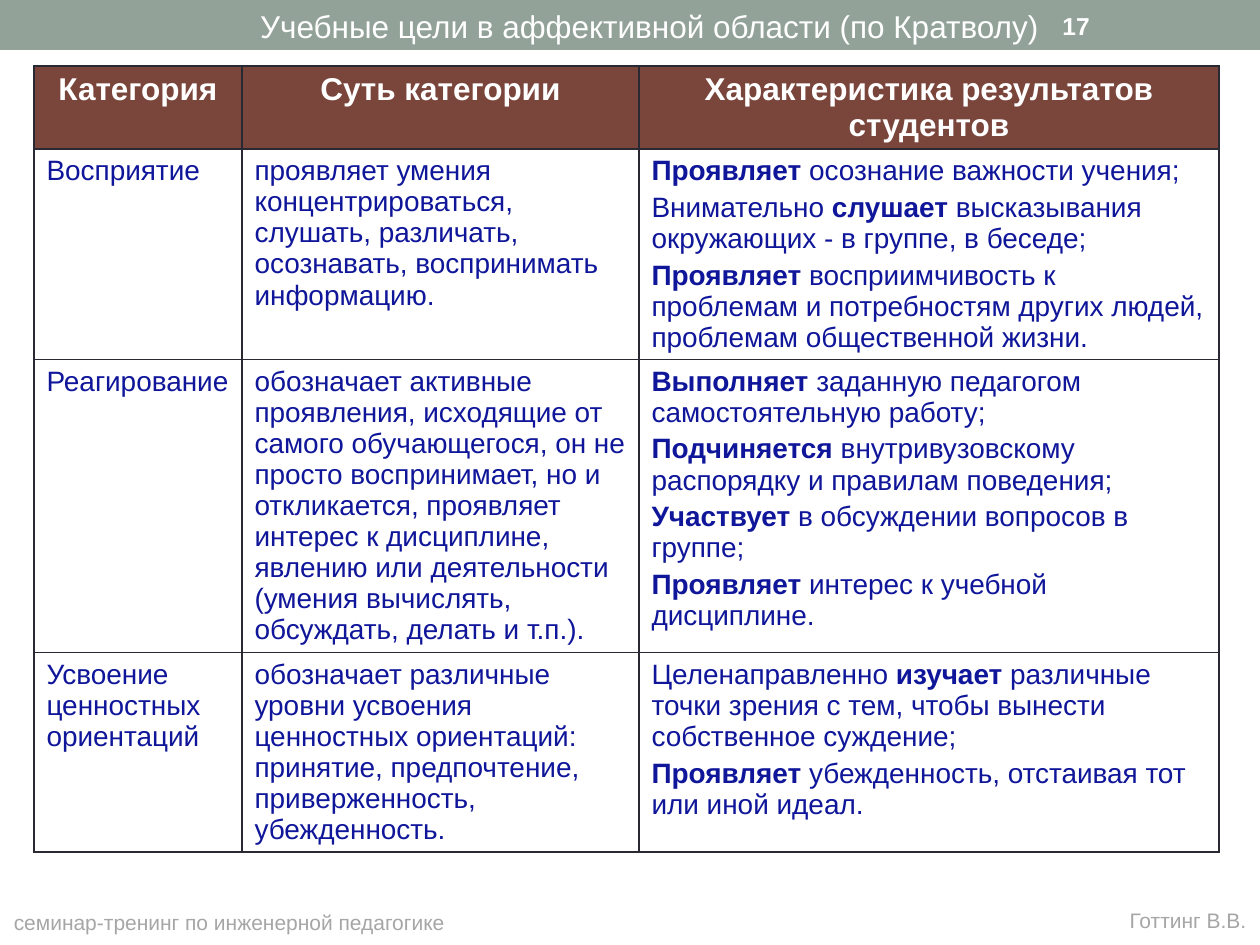
from lxml import etree
from pptx import Presentation
from pptx.dml.color import RGBColor
from pptx.enum.shapes import MSO_SHAPE
from pptx.enum.text import MSO_ANCHOR, PP_ALIGN
from pptx.oxml.ns import qn
from pptx.util import Pt

EMU_PER_PX = 914400 / 126
RECTANGLE = MSO_SHAPE.RECTANGLE
LEFT, CENTER = PP_ALIGN.LEFT, PP_ALIGN.CENTER
TOP, MIDDLE = MSO_ANCHOR.TOP, MSO_ANCHOR.MIDDLE

WHITE, SAGE, BROWN = "FFFFFF", "93A299", "7A463C"
NAVY, GRAY, BORDER = "0F1699", "A6A6A6", "292934"

COLUMN_WIDTHS = [208, 397, 580]
ROW_HEIGHTS = [83, 210, 293, 199]

# Each cell is a list of paragraphs; ** switches bold on and off
GOALS = [
    [["Категория"], ["Суть категории"], ["Характеристика результатов студентов"]],
    [["Восприятие"],
     ["проявляет умения концентрироваться, слушать, различать, осознавать, "
      "воспринимать информацию."],
     ["**Проявляет** осознание важности учения;",
      "Внимательно **слушает** высказывания окружающих - в группе, в беседе;",
      "**Проявляет** восприимчивость к проблемам и потребностям других людей, "
      "проблемам общественной жизни."]],
    [["Реагирование"],
     ["обозначает активные проявления, исходящие от самого обучающегося, он не "
      "просто воспринимает, но и откликается, проявляет интерес к дисциплине, "
      "явлению или деятельности (умения вычислять, обсуждать, делать и т.п.)."],
     ["**Выполняет** заданную педагогом самостоятельную работу;",
      "**Подчиняется **внутривузовскому распорядку и правилам поведения;",
      "**Участвует** в обсуждении вопросов в группе;",
      "**Проявляет** интерес к учебной дисциплине."]],
    [["Усвоение ценностных ориентаций"],
     ["обозначает различные уровни усвоения ценностных ориентаций: принятие, "
      "предпочтение, приверженность, убежденность."],
     ["Целенаправленно **изучает** различные точки зрения с тем, чтобы вынести "
      "собственное суждение;",
      "**Проявляет** убежденность, отстаивая тот или иной идеал."]],
]


def px(length):
    return round(length * EMU_PER_PX)


def color(hex_value):
    return RGBColor.from_string(hex_value)


class SlideBuilder:
    font = "Arial"

    def __init__(self, slide):
        self.slide = slide

    def style(self, run, size, hex_value, bold):
        run.font.name = self.font
        run.font.size = Pt(size)
        run.font.bold = bold
        run.font.color.rgb = color(hex_value)

    def bar(self, left, top, width, height, fill):
        bar = self.slide.shapes.add_shape(
            RECTANGLE, px(left), px(top), px(width), px(height))
        bar.shadow.inherit = False
        bar.fill.solid()
        bar.fill.fore_color.rgb = color(fill)
        bar.line.fill.background()

    def text(self, left, top, width, height, wording, size, hex_value,
             bold=False, align=CENTER, anchor=MIDDLE):
        frame = self.slide.shapes.add_textbox(
            px(left), px(top), px(width), px(height)).text_frame
        frame.word_wrap = True
        frame.vertical_anchor = anchor
        frame.text = wording
        paragraph = frame.paragraphs[0]
        paragraph.alignment = align
        self.style(paragraph.runs[0], size, hex_value, bold)

    def borders(self, cell):
        properties = cell._tc.get_or_add_tcPr()
        for index, side in enumerate(("lnL", "lnR", "lnT", "lnB")):
            line = etree.Element(qn(f"a:{side}"), w=str(Pt(1)))
            fill = etree.SubElement(line, qn("a:solidFill"))
            etree.SubElement(fill, qn("a:srgbClr"), val=BORDER)
            properties.insert(index, line)

    def cell(self, cell, paragraphs, header):
        cell.fill.solid()
        cell.fill.fore_color.rgb = color(BROWN if header else WHITE)
        self.borders(cell)
        frame = cell.text_frame
        for index, wording in enumerate(paragraphs):
            paragraph = frame.add_paragraph() if index else frame.paragraphs[0]
            paragraph.alignment = CENTER if header else LEFT
            if not header:
                paragraph.space_before = Pt(3.2)
            for part, piece in enumerate(wording.split("**")):
                if piece:
                    run = paragraph.add_run()
                    run.text = piece
                    self.style(run, 18 if header else 16,
                               WHITE if header else NAVY,
                               header or part % 2 == 1)

    def table(self, left, top, widths, heights, rows):
        table = self.slide.shapes.add_table(
            len(heights), len(widths), px(left), px(top),
            px(sum(widths)), px(sum(heights))).table
        table.horz_banding = False
        for column, width in zip(table.columns, widths):
            column.width = px(width)
        for row_index, (row, height) in enumerate(zip(table.rows, heights)):
            row.height = px(height)
            for cell, paragraphs in zip(row.cells, rows[row_index]):
                self.cell(cell, paragraphs, header=row_index == 0)


def main():
    deck = Presentation()
    deck.slide_width, deck.slide_height = px(1260), px(945)
    builder = SlideBuilder(deck.slides.add_slide(deck.slide_layouts[6]))

    # Header band and table of goals
    builder.bar(0, 0, 1260, 50, SAGE)
    builder.table(34, 66, COLUMN_WIDTHS, ROW_HEIGHTS, GOALS)

    # Title and slide number
    builder.text(64, 1, 1171, 50, "Учебные цели в аффективной области (по Кратволу)",
                 18, WHITE, anchor=TOP)
    builder.text(1050, 3, 147, 45, "17", 14, WHITE, bold=True, align=LEFT)

    # Footer
    builder.text(-54, 900, 567, 45, "семинар-тренинг по инженерной педагогике", 12, GRAY)
    builder.text(1116, 900, 144, 40, "Готтинг В.В.", 12, GRAY)

    deck.save("out.pptx")


if __name__ == "__main__":
    main()
